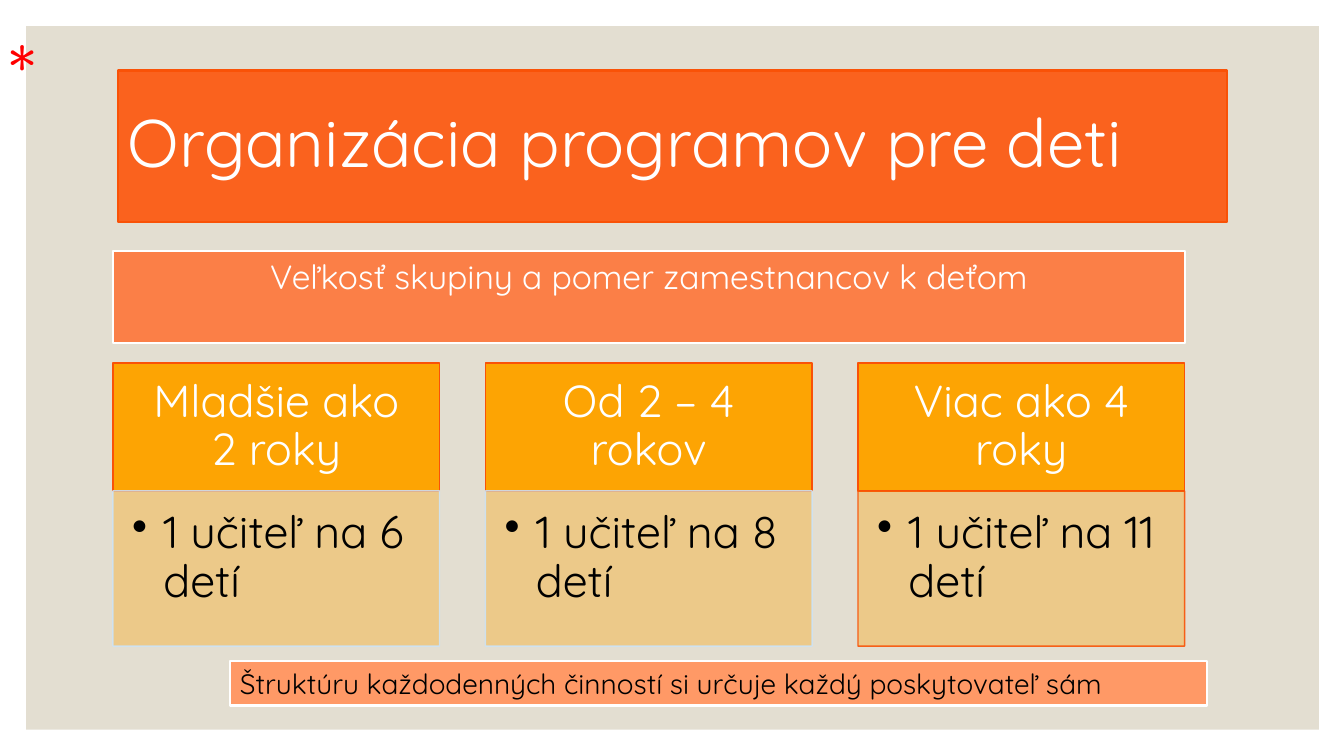
import pptx
import pptx.util
import pptx.dml.color
import pptx.enum.shapes
import pptx.enum.text
import pptx.oxml.ns
import lxml.etree

PX = 9144
FONT = "Quicksand"
LEFT = pptx.enum.text.PP_ALIGN.LEFT
MID = pptx.enum.text.PP_ALIGN.CENTER
TOP = pptx.enum.text.MSO_ANCHOR.TOP
CENTER = pptx.enum.text.MSO_ANCHOR.MIDDLE
PAD = (10, 5, 10, 5)


def px(n):
    return pptx.util.Emu(round(n * PX))


def color(code):
    return pptx.dml.color.RGBColor.from_string(code)


def add(parent, tag, **attrs):
    node = lxml.etree.SubElement(parent, pptx.oxml.ns.qn(tag))
    for key, value in attrs.items():
        node.set(key, str(value))
    return node


def fade(fill, share):
    add(fill.find(".//" + pptx.oxml.ns.qn("a:srgbClr")), "a:alpha", val=share * 1000)


def rect(slide, box, fill, line=None, width=1.5):
    kind = pptx.enum.shapes.MSO_SHAPE.RECTANGLE
    shape = slide.shapes.add_shape(kind, *map(px, box))
    shape.shadow.inherit = False
    shape.fill.solid()
    shape.fill.fore_color.rgb = color(fill)
    if line:
        shape.line.color.rgb = color(line)
        shape.line.width = pptx.util.Pt(width)
    else:
        shape.line.fill.background()
    return shape


def write(shape, text, size, ink, align=LEFT, anchor=TOP, pad=PAD, space=None):
    frame = shape.text_frame
    frame.word_wrap = True
    frame.vertical_anchor = anchor
    (frame.margin_left, frame.margin_top,
     frame.margin_right, frame.margin_bottom) = map(px, pad)
    para = frame.paragraphs[0]
    para.alignment = align
    if space:
        para.line_spacing = space
    run = para.add_run()
    run.text = text
    run.font.name = FONT
    run.font.size = pptx.util.Pt(size)
    run.font.color.rgb = color(ink)
    return para


def title(slide, box):
    shape = rect(slide, box, "FA621E", "F95207")
    write(shape, "Organizácia programov pre deti", 48, "FFFFFF",
          anchor=CENTER, space=0.9)


def banner(slide, box):
    shape = rect(slide, box, "FB7F47", "FFFFFF")
    write(shape, "Veľkosť skupiny a pomer zamestnancov k deťom", 24, "FFFFFF",
          align=MID)


def card(slide, box, age, ratio, edge):
    x, y, w, h = box
    split = 127
    head = rect(slide, (x, y, w, split), "FDA403", "F95207", 1)
    write(head, age, 32, "FFFFFF", MID, CENTER, (25, 14, 25, 14), 0.9)
    body = rect(slide, (x, y + split, w, h - split), "FDA403", edge, 1)
    props = body.fill._xPr
    fade(props.find(pptx.oxml.ns.qn("a:solidFill")), 35)
    fade(props.find(pptx.oxml.ns.qn("a:ln")), 90)
    para = write(body, ratio, 32, "000000", pad=(19, 19, 25, 28), space=0.9)
    rules = para._p.get_or_add_pPr()
    rules.set("marL", str(px(31)))
    rules.set("indent", str(px(-31)))
    add(rules, "a:buChar", char="•")


def cards(slide, box):
    x, y, w, h = box
    wide = 324
    groups = [
        ("Mladšie ako 2 roky", "1 učiteľ na 6 detí", "CDE3F5"),
        ("Od 2 – 4 rokov", "1 učiteľ na 8 detí", "CDE3F5"),
        ("Viac ako 4 roky", "1 učiteľ na 11 detí", "F95207"),
    ]
    step = (w - wide) / (len(groups) - 1)
    for i, group in enumerate(groups):
        card(slide, (x + i * step, y, wide, h), *group)


def footer(slide, box):
    shape = rect(slide, box, "FF9966", "FFFFFF")
    write(shape, "Štruktúru každodenných činností si určuje každý poskytovateľ sám",
          20, "000000")


def star(slide, box):
    write(slide.shapes.add_textbox(*map(px, box)), "*", 60, "FF0000")


def main():
    deck = pptx.Presentation()
    deck.slide_width, deck.slide_height = px(1333), px(750)
    slide = deck.slides.add_slide(deck.slide_layouts[6])
    rect(slide, (26, 26, 1282, 698), "E3DED1")
    title(slide, (117, 70, 1100, 150))
    cards(slide, (112, 360, 1063, 281))
    banner(slide, (112, 249, 1063, 91))
    footer(slide, (228, 656, 969, 44))
    star(slide, (0, 15, 1272, 111))
    deck.save("out.pptx")


if __name__ == "__main__":
    main()
